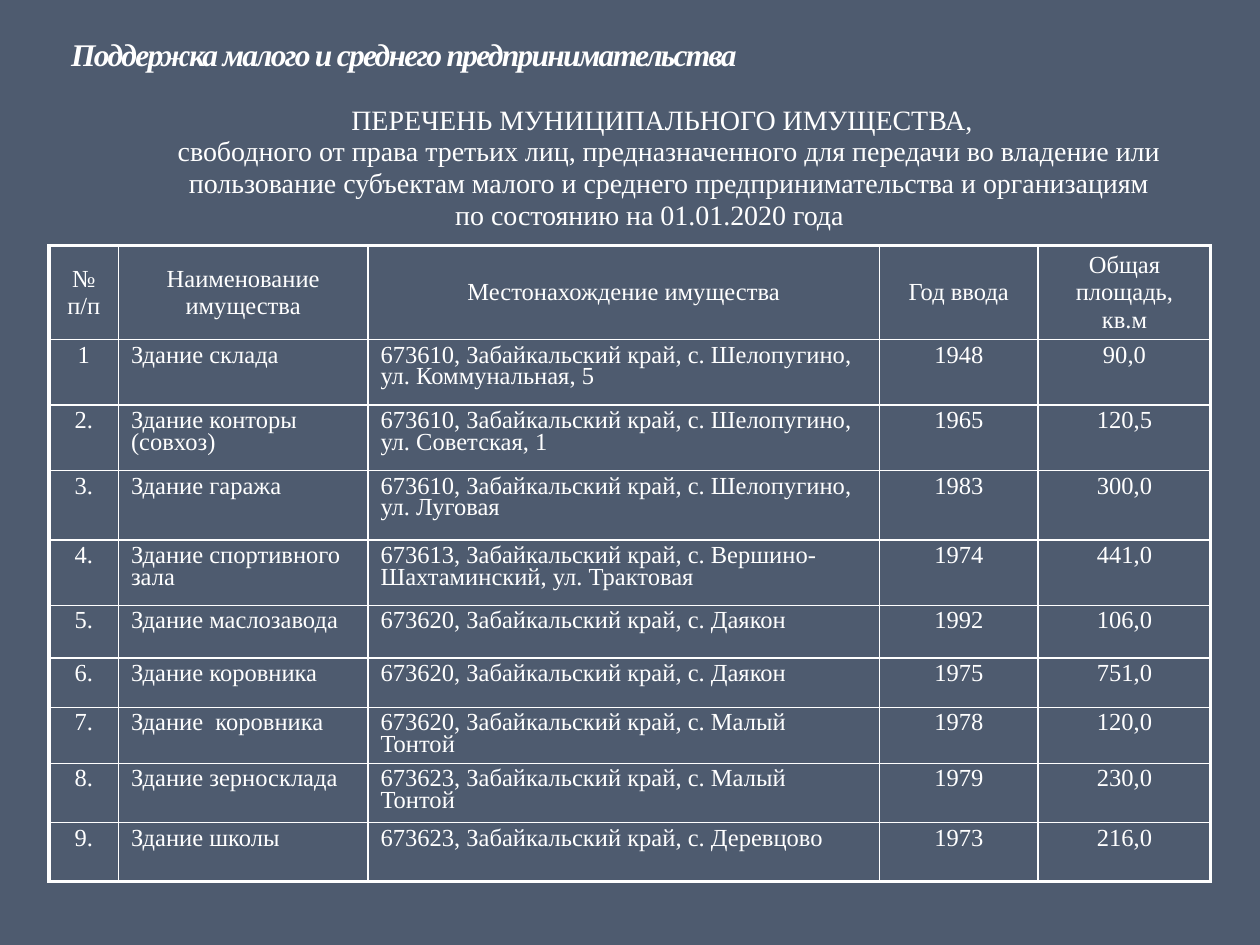
from dataclasses import dataclass

from lxml.etree import SubElement
from pptx import Presentation
from pptx.dml.color import RGBColor
from pptx.enum.text import MSO_ANCHOR, PP_ALIGN
from pptx.oxml import parse_xml
from pptx.oxml.ns import nsdecls
from pptx.util import Inches, Pt


@dataclass(frozen=True)
class Theme:
    background: str = "4E5B6F"
    ink: str = "FFFFFF"
    font: str = "Times New Roman"
    title_size: int = 18
    heading_size: int = 16
    table_size: int = 14
    outer_line: float = 2.25
    inner_line: float = 1


THEME = Theme()


def write(paragraph, text, size, align=PP_ALIGN.CENTER, line_spacing=1.0,
          bold=False, italic=False, tracking=0, margin=0):
    """Fill a paragraph; tracking is in points, margin in inches."""
    paragraph.alignment = align
    paragraph.line_spacing = line_spacing
    properties = paragraph._p.get_or_add_pPr()
    properties.set("marL", str(Inches(margin)))
    properties.set("indent", "0")
    run = paragraph.add_run()
    run.text = text
    run.font.name = THEME.font
    run.font.size = Pt(size)
    run.font.bold = bold
    run.font.italic = italic
    run.font.color.rgb = RGBColor.from_string(THEME.ink)
    if tracking:
        run._r.get_or_add_rPr().set("spc", str(tracking * 100))


def set_borders(cell, widths):
    """Draw the left, right, top and bottom lines, with widths in points."""
    properties = cell._tc.get_or_add_tcPr()
    for position, (side, width) in enumerate(zip("LRTB", widths)):
        line = parse_xml(f'<a:ln{side} {nsdecls("a")} w="{Pt(width)}"><a:solidFill>'
                         f'<a:srgbClr val="{THEME.ink}"/></a:solidFill></a:ln{side}>')
        properties.insert(position, line)


prs = Presentation()
prs.slide_width, prs.slide_height = Inches(10), Inches(7.5)
slide = prs.slides.add_slide(prs.slide_layouts[5])
slide.background.fill.solid()
slide.background.fill.fore_color.rgb = RGBColor.from_string(THEME.background)

# Title
title = slide.shapes.title
title.left, title.top = Inches(0), Inches(0.23)
title.width, title.height = Inches(6.41), Inches(0.39)
title.text_frame.vertical_anchor = MSO_ANCHOR.MIDDLE
write(title.text_frame.paragraphs[0], "Поддержка малого и среднего предпринимательства",
      THEME.title_size, bold=True, italic=True, tracking=-1)

# Property register
HEADER = ["№ п/п", "Наименование имущества", "Местонахождение имущества",
          "Год ввода", "Общая площадь, кв.м"]
BUILDINGS = [
    ("1", "Здание склада", "673610, Забайкальский край, с. Шелопугино, ул. Коммунальная, 5", "1948", "90,0"),
    ("2.", "Здание конторы (совхоз)", "673610, Забайкальский край, с. Шелопугино, ул. Советская, 1", "1965", "120,5"),
    ("3.", "Здание гаража", "673610, Забайкальский край, с. Шелопугино, ул. Луговая", "1983", "300,0"),
    ("4.", "Здание спортивного зала", "673613, Забайкальский край, с. Вершино-Шахтаминский, ул. Трактовая", "1974", "441,0"),
    ("5.", "Здание маслозавода", "673620, Забайкальский край, с. Даякон", "1992", "106,0"),
    ("6.", "Здание коровника", "673620, Забайкальский край, с. Даякон", "1975", "751,0"),
    ("7.", "Здание  коровника", "673620, Забайкальский край, с. Малый Тонтой", "1978", "120,0"),
    ("8.", "Здание зерносклада", "673623, Забайкальский край, с. Малый Тонтой", "1979", "230,0"),
    ("9.", "Здание школы", "673623, Забайкальский край, с. Деревцово", "1973", "216,0"),
]
COLUMN_WIDTHS = [0.55, 1.98, 4.06, 1.26, 1.37]
ROW_HEIGHTS = [0.68, 0.52, 0.52, 0.55, 0.52, 0.42, 0.39, 0.39, 0.47, 0.47]
LEFT_ALIGNED = (1, 2)

register = slide.shapes.add_table(
    len(ROW_HEIGHTS), len(COLUMN_WIDTHS), Inches(0.39), Inches(1.95),
    Inches(sum(COLUMN_WIDTHS)), Inches(sum(ROW_HEIGHTS))).table
register.first_row = register.horz_banding = False
for column, width in zip(register.columns, COLUMN_WIDTHS):
    column.width = Inches(width)
for row, height in zip(register.rows, ROW_HEIGHTS):
    row.height = Inches(height)

last_row, last_column = len(ROW_HEIGHTS) - 1, len(COLUMN_WIDTHS) - 1
for r, record in enumerate([HEADER, *BUILDINGS]):
    for c, text in enumerate(record):
        cell = register.cell(r, c)
        cell.fill.background()
        is_header = r == 0
        cell.vertical_anchor = MSO_ANCHOR.MIDDLE if is_header else MSO_ANCHOR.TOP
        is_left = c in LEFT_ALIGNED and not is_header
        write(cell.text_frame.paragraphs[0], text, THEME.table_size,
              align=PP_ALIGN.LEFT if is_left else PP_ALIGN.CENTER,
              line_spacing=1.0 if is_header else 0.8)
        on_edge = (c == 0, c == last_column, r == 0, r == last_row)
        set_borders(cell, [THEME.outer_line if edge else THEME.inner_line for edge in on_edge])

# Heading of the register
HEADING = [
    ("ПЕРЕЧЕНЬ МУНИЦИПАЛЬНОГО ИМУЩЕСТВА,", 0.2),
    ("свободного от права третьих лиц, предназначенного для передачи во владение или "
     "пользование субъектам малого и среднего предпринимательства и организациям", 0.31),
    ("по состоянию на 01.01.2020 года", 0),
]
heading = slide.shapes.add_textbox(Inches(0.55), Inches(0.78), Inches(9.21), Inches(1.09)).text_frame
heading.word_wrap = True
for i, (text, margin) in enumerate(HEADING):
    paragraph = heading.add_paragraph() if i else heading.paragraphs[0]
    write(paragraph, text, THEME.heading_size, line_spacing=0.95, margin=margin)

prs.save("out.pptx")
